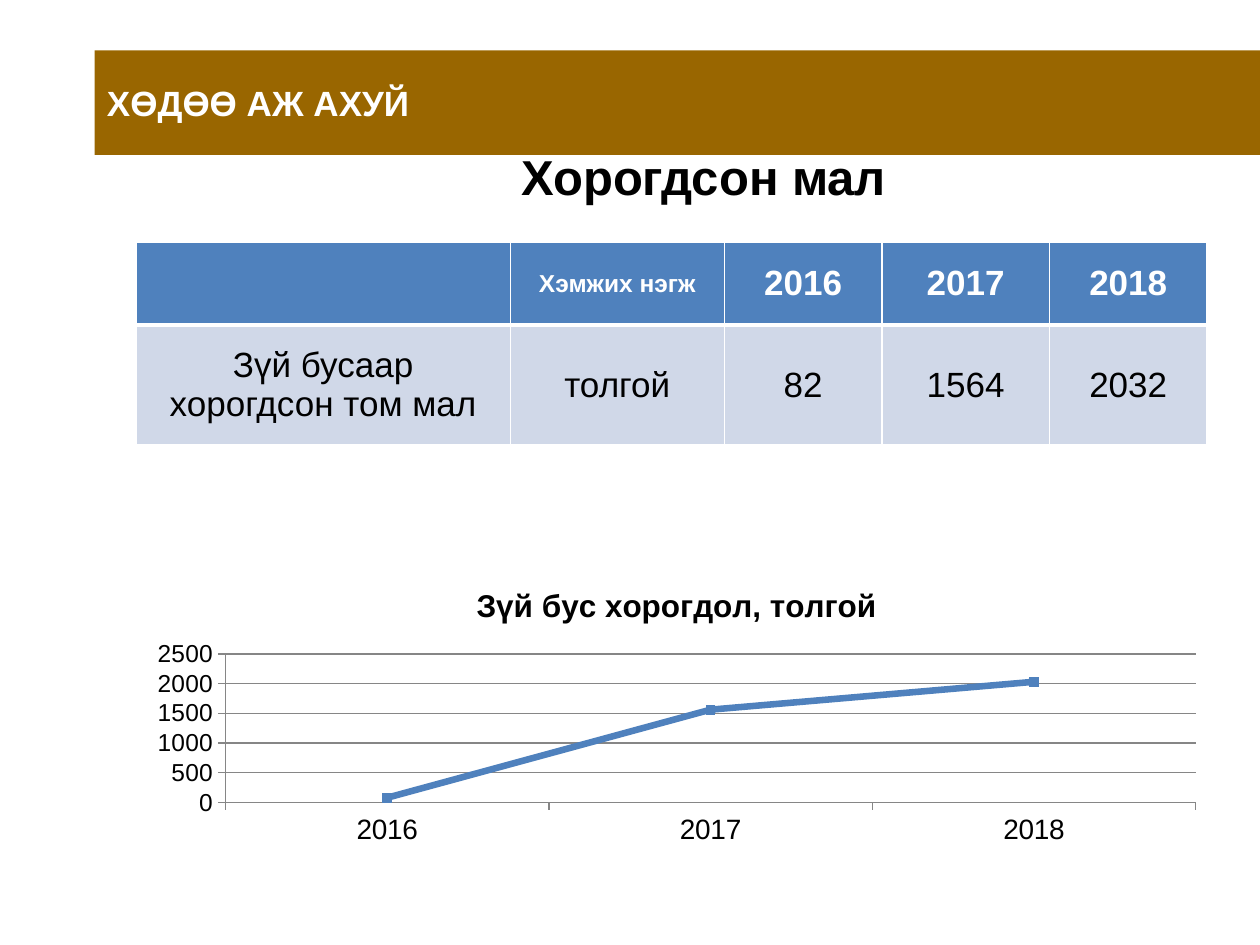
from lxml.etree import SubElement
from pptx import Presentation
from pptx.chart.data import CategoryChartData
from pptx.dml.color import RGBColor
from pptx.enum.chart import XL_CHART_TYPE, XL_MARKER_STYLE, XL_TICK_MARK
from pptx.enum.shapes import MSO_SHAPE
from pptx.enum.text import MSO_ANCHOR, PP_ALIGN
from pptx.oxml.ns import qn
from pptx.util import Inches, Pt

COLORS = {
    "banner": "996600",
    "blue": "4F81BD",
    "pale": "D0D8E8",
    "white": "FFFFFF",
    "black": "000000",
    "grid": "868686",
}
FONT = "Arial"
NO_STYLE = "{2D5ABB26-0587-4C30-8999-92F81FD0307C}"
YEARS = ["2016", "2017", "2018"]
TABLE_LOSSES = ["82", "1564", "2032"]
CHART_LOSSES = [80, 1560, 2030]


def color(name):
    return RGBColor.from_string(COLORS[name])


def format_font(font, size, color_name="black", bold=False):
    font.name = FONT
    font.size = Pt(size)
    font.bold = bold
    font.color.rgb = color(color_name)


def set_cell(cell, text, size, color_name, bold, fill=None):
    cell.vertical_anchor = MSO_ANCHOR.MIDDLE
    if fill:
        cell.fill.solid()
        cell.fill.fore_color.rgb = color(fill)
    paragraph = cell.text_frame.paragraphs[0]
    paragraph.text = text
    paragraph.alignment = PP_ALIGN.CENTER
    for run in paragraph.runs:
        format_font(run.font, size, color_name, bold)


def set_borders(cell, **widths):
    """Draw white borders; sides are L, R, T, B with widths in points."""
    properties = cell._tc.get_or_add_tcPr()
    for position, (side, width) in enumerate(widths.items()):
        line = SubElement(properties, qn(f"a:ln{side}"), w=str(Pt(width)))
        fill = SubElement(line, qn("a:solidFill"))
        SubElement(fill, qn("a:srgbClr"), val=COLORS["white"])
        properties.insert(position, line)


def add_banner(slide, text):
    shape = slide.shapes.add_shape(
        MSO_SHAPE.RECTANGLE, Inches(0.75), Inches(0.4), Inches(9.25), Inches(0.83))
    shape.shadow.inherit = False
    shape.fill.solid()
    shape.fill.fore_color.rgb = color("banner")
    shape.line.fill.background()
    text_frame = shape.text_frame
    text_frame.vertical_anchor = MSO_ANCHOR.MIDDLE
    paragraph = text_frame.paragraphs[0]
    paragraph.text = text
    paragraph.alignment = PP_ALIGN.JUSTIFY
    format_font(paragraph.runs[0].font, 20, "white", True)


def add_heading(slide, text):
    frame = slide.shapes.add_table(
        1, 1, Inches(3.25), Inches(1.08), Inches(4.67), Inches(0.67))
    table = frame.table
    table.first_row = table.horz_banding = False
    table._tbl.tblPr.find(qn("a:tableStyleId")).text = NO_STYLE
    cell = table.cell(0, 0)
    cell.margin_left = cell.margin_right = cell.margin_top = cell.margin_bottom = 0
    set_cell(cell, text, 28, "black", True)


def add_loss_table(slide):
    rows = [
        ["", "Хэмжих нэгж", *YEARS],
        ["Зүй бусаар хорогдсон том мал", "толгой", *TABLE_LOSSES],
    ]
    widths = [2.97, 1.7, 1.25, 1.33, 1.25]
    heights = [0.66, 0.95]
    table = slide.shapes.add_table(
        len(rows), len(widths), Inches(1.08), Inches(1.92),
        Inches(sum(widths)), Inches(sum(heights))).table
    for column, width in zip(table.columns, widths):
        column.width = Inches(width)
    for row_index, texts in enumerate(rows):
        table.rows[row_index].height = Inches(heights[row_index])
        header = row_index == 0
        for column_index, text in enumerate(texts):
            cell = table.cell(row_index, column_index)
            size = 14 if header and column_index == 1 else 20
            set_cell(cell, text, size, "white" if header else "black", header,
                     "blue" if header else "pale")
            set_borders(cell, L=1, R=1, T=1 if header else 3, B=3 if header else 1)


def set_plot_layout(chart, **fractions):
    plot_area = chart._chartSpace.chart.plotArea
    layout = plot_area.find(qn("c:layout"))
    if layout is None:
        layout = SubElement(plot_area, qn("c:layout"))
        plot_area.insert(0, layout)
    manual = SubElement(layout, qn("c:manualLayout"))
    settings = {"layoutTarget": "inner", "xMode": "edge", "yMode": "edge", **fractions}
    for name, value in settings.items():
        SubElement(manual, qn(f"c:{name}")).set("val", str(value))


def format_axis(axis, size):
    axis.major_tick_mark = XL_TICK_MARK.OUTSIDE
    axis.minor_tick_mark = XL_TICK_MARK.NONE
    axis.format.line.color.rgb = color("grid")
    format_font(axis.tick_labels.font, size)


def add_loss_chart(slide, title):
    width, height = 8.58, 2.25
    data = CategoryChartData()
    data.categories = YEARS
    data.add_series("Series 1", CHART_LOSSES)
    chart = slide.shapes.add_chart(
        XL_CHART_TYPE.LINE_MARKERS_STACKED, Inches(1.08), Inches(4.5),
        Inches(width), Inches(height), data).chart
    chart.has_legend = False
    format_font(chart.font, 18)
    chart.font.name = "Calibri"
    chart.has_title = True
    chart.chart_title.include_in_layout = False
    chart.chart_title.text_frame.text = title
    format_font(chart.chart_title.text_frame.paragraphs[0].runs[0].font, 18, bold=True)
    set_plot_layout(chart, x=0.71 / width, y=0.69 / height,
                    w=7.7 / width, h=1.18 / height)

    # Axes
    format_axis(chart.category_axis, 16)
    value_axis = chart.value_axis
    format_axis(value_axis, 14)
    value_axis.minimum_scale, value_axis.maximum_scale = 0, 2500
    value_axis.major_unit = 500
    value_axis.has_major_gridlines = True
    value_axis.major_gridlines.format.line.color.rgb = color("grid")

    # Line and markers
    chart.plots[0].vary_by_categories = False
    series = chart.plots[0].series[0]
    series.smooth = False
    series.format.line.color.rgb = color("blue")
    series.format.line.width = Pt(3.75)
    series.marker.style = XL_MARKER_STYLE.SQUARE
    series.marker.size = 5
    series.marker.format.fill.solid()
    series.marker.format.fill.fore_color.rgb = color("blue")
    series.marker.format.line.color.rgb = color("blue")


def main():
    presentation = Presentation()
    presentation.slide_width = Inches(10)
    presentation.slide_height = Inches(7.5)
    slide = presentation.slides.add_slide(presentation.slide_layouts[6])
    add_loss_table(slide)
    add_banner(slide, "ХӨДӨӨ АЖ АХУЙ")
    add_heading(slide, "Хорогдсон мал")
    add_loss_chart(slide, "Зүй бус хорогдол, толгой")
    presentation.save("out.pptx")


if __name__ == "__main__":
    main()
